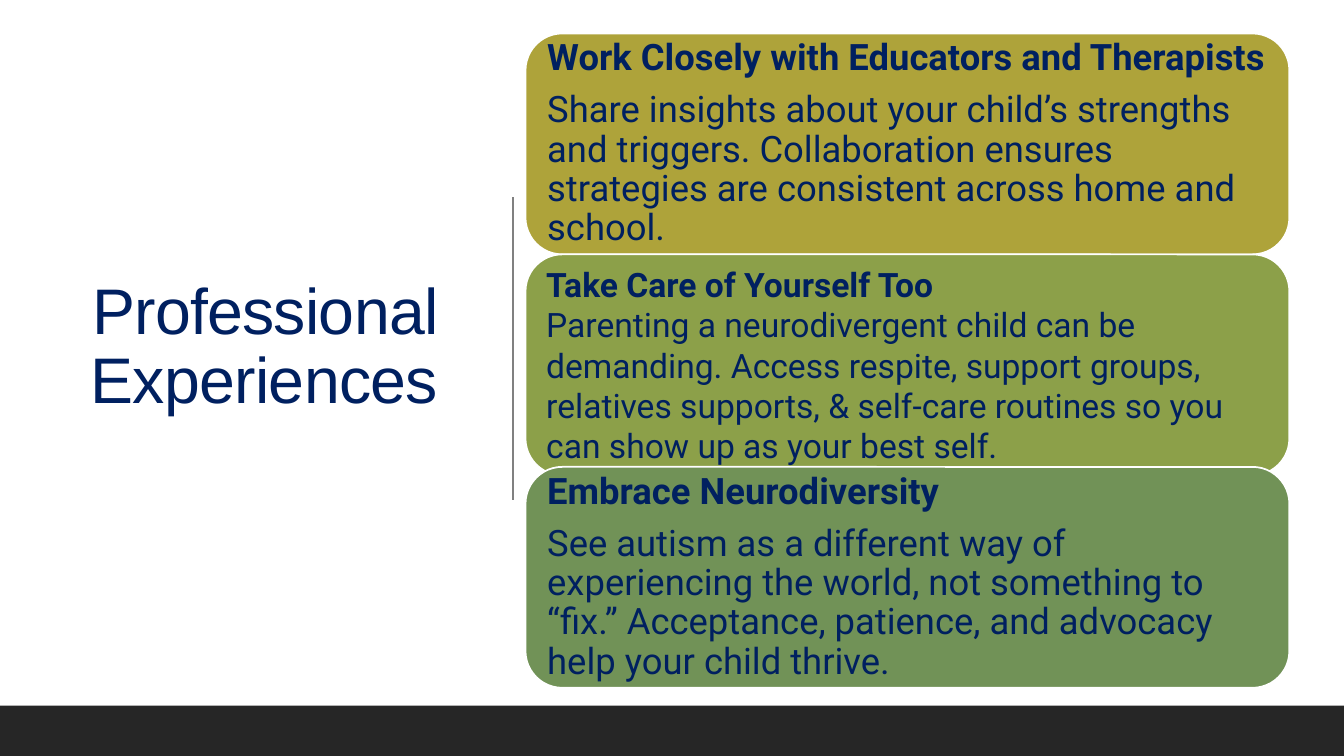
from pptx import Presentation
from pptx.dml.color import RGBColor
from pptx.enum.shapes import MSO_CONNECTOR as Conn, MSO_SHAPE as Shape
from pptx.enum.text import MSO_ANCHOR as Anchor, PP_ALIGN as Align
from pptx.oxml.ns import qn
from pptx.util import Pt

# Content
TITLE = "Professional Experiences"
# top, fill, type style, heading, body
CARDS = [
    (23.9, "AEA33A", "large", "Work Closely with Educators and Therapists",
     "Share insights about your child’s strengths and triggers. Collaboration "
     "ensures strategies are consistent across home and school."),
    (181.7, "8CA049", "small", "Take Care of Yourself Too",
     "Parenting a neurodivergent child can be demanding. Access respite, "
     "support groups, relatives supports, & self-care routines so you can "
     "show up as your best self."),
    (333.5, "719257", "large", "Embrace Neurodiversity",
     "See autism as a different way of experiencing the world, not something "
     "to “fix.” Acceptance, patience, and advocacy help your child thrive."),
]

# Theme
THEME = {
    "ink": "002060", "rule": "808080", "bar": "262626", "edge": "FFFFFF",
    "head": "Arial", "body": "Roboto", "title": 46,
    # size, line spacing, space after, inset
    "large": (26, 0.9, 9.1, 7.8),
    "small": (24, 1.0, 0, 7.2),
}
WIDE, HIGH = 960, 540
BAR = 36
LEFT, CARD_W, CARD_H = 375.4, 545.6, 157.8
PAD = 7.7


def color(name):
    return RGBColor.from_string(THEME.get(name, name))


def block(kind, x, y, w, h, fill, edge=None):
    item = slide.shapes.add_shape(kind, Pt(x), Pt(y), Pt(w), Pt(h))
    item.shadow.inherit = False
    item.fill.solid()
    item.fill.fore_color.rgb = color(fill)
    if edge:
        item.line.color.rgb = color(edge)
        item.line.width = Pt(1.25)
    else:
        item.line.fill.background()


def text(x, y, w, h, lines, face, size, space, after=0, inset=None):
    frame = slide.shapes.add_textbox(Pt(x), Pt(y), Pt(w), Pt(h)).text_frame
    frame.word_wrap = True
    frame.vertical_anchor = Anchor.MIDDLE
    if inset:
        frame.margin_left = frame.margin_right = Pt(inset)
        frame.margin_top = frame.margin_bottom = Pt(inset)
    frame.text = "\n".join(lines)
    for para in frame.paragraphs:
        para.line_spacing = space
        para.space_after = Pt(after)
        para.font.name = face
        para.font.size = Pt(size)
        para.font.color.rgb = color("ink")
    return frame.paragraphs


deck = Presentation()
deck.slide_width, deck.slide_height = Pt(WIDE), Pt(HIGH)
slide = deck.slides.add_slide(deck.slide_layouts[6])

# Title, set slightly tight
title = text(29.5, 49.7, 290.2, 398.2, [TITLE], THEME["head"], THEME["title"], 0.9)[0]
title.alignment = Align.RIGHT
title.runs[0].font.size = Pt(THEME["title"])
title.runs[0].font.language_id = None
title.runs[0].font._element.set("spc", "-50")

# Divider
rule = slide.shapes.add_connector(Conn.STRAIGHT, Pt(366.5), Pt(141), Pt(366.5), Pt(357))
rule.line.color.rgb = color("rule")
rule.line.width = Pt(1)
props = rule._element.spPr
props.append(props.makeelement(qn("a:effectLst"), {}))

# Bottom bar
block(Shape.RECTANGLE, 0, HIGH - BAR, WIDE, BAR, "bar")

# Cards
for top, fill, style, head, body in CARDS:
    block(Shape.ROUNDED_RECTANGLE, LEFT, top, CARD_W, CARD_H, fill, "edge")
    size, space, after, inset = THEME[style]
    paras = text(LEFT + PAD, top + PAD, CARD_W - 2 * PAD, CARD_H - 2 * PAD,
                 [head, body], THEME["body"], size, space, after, inset)
    paras[0].font.bold = True

deck.save("out.pptx")
